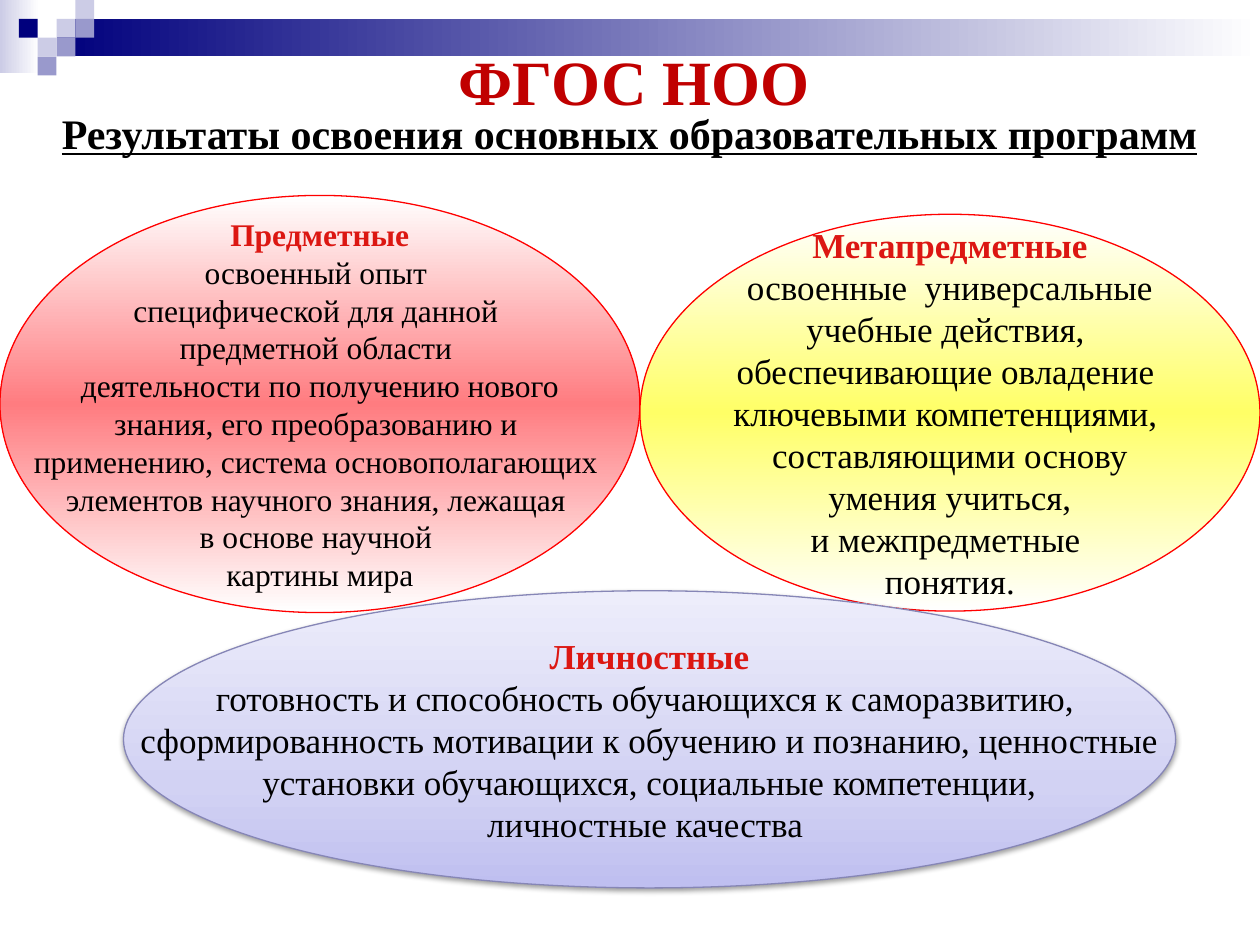
from lxml.etree import SubElement
from pptx import Presentation
from pptx.dml.color import RGBColor as Rgb
from pptx.enum.shapes import MSO_SHAPE as Shape
from pptx.enum.text import MSO_ANCHOR as Anchor, PP_ALIGN as Align
from pptx.oxml.ns import qn
from pptx.util import Cm, Pt

HUES = {
    "navy": "00007D", "mist": "CCCCE6", "haze": "9999CC", "white": "FFFFFF",
    "rose": "FF7C80", "lemon": "FFFF66", "red": "FF0000", "head": "DC1712",
    "title": "C00000", "black": "000000", "edge": "8686B6",
    "deep": "BFBFF0", "mid": "D2D2F3", "pale": "EDEDFB",
}
FACE = "Times New Roman"


def hue(name):
    return Rgb.from_string(HUES[name])


def apply(item, look):
    for key, value in look.items():
        setattr(item, key, value)


def node(base, tag, **attrs):
    return SubElement(base, qn(tag), {k: str(v) for k, v in attrs.items()})


def shade(fill, stops, angle):
    fill.gradient()
    fill.gradient_angle = angle
    ramp = fill._fill._gradFill.find(qn("a:gsLst"))
    for old in list(ramp):
        ramp.remove(old)
    for at, name in stops:
        stop = node(ramp, "a:gs", pos=at * 1000)
        node(stop, "a:srgbClr", val=HUES[name])


def draw(slide, kind, box, paint, angle=0, edge=None):
    form = slide.shapes.add_shape(kind, *map(Cm, box))
    form.shadow.inherit = False
    if isinstance(paint, str):
        form.fill.solid()
        form.fill.fore_color.rgb = hue(paint)
    else:
        shade(form.fill, paint, angle)
    if edge:
        form.line.color.rgb = hue(edge)
        form.line.width = Pt(0.75)
    else:
        form.line.fill.background()
    return form


def write(form, rows, wrap, anchor):
    frame = form.text_frame
    apply(frame, {"word_wrap": wrap, "vertical_anchor": anchor})
    for i, (text, name, look) in enumerate(rows):
        para = frame.paragraphs[0] if i == 0 else frame.add_paragraph()
        para.alignment = Align.CENTER
        run = para.add_run()
        run.text = text
        apply(run.font, {"name": FACE, **look})
        run.font.color.rgb = hue(name)


def header(slide, box):
    left, top, width, unit = box
    draw(slide, Shape.RECTANGLE, (left, top, 0.79, 1.47),
         [(0, "mist"), (100, "white")])
    draw(slide, Shape.RECTANGLE, (left + 3 * unit, top + unit, width - 3 * unit, 2 * unit),
         [(0, "navy"), (100, "white")])
    tiles = [(3, 1, "mist"), (4, 0, "mist"), (4, 1, "haze"), (2, 2, "mist"),
             (1, 1, "navy"), (3, 2, "haze"), (2, 3, "haze")]
    for col, row, name in tiles:
        draw(slide, Shape.RECTANGLE,
             (left + col * unit, top + row * unit, unit, unit), name)


def oval(slide, box, stops, angle, edge, size, head, lines):
    form = draw(slide, Shape.OVAL, box, stops, angle, edge)
    rows = [(head, "head", {"size": Pt(size), "bold": True})]
    rows += [(line, "black", {"size": Pt(size), "bold": False}) for line in lines]
    write(form, rows, False, Anchor.MIDDLE)
    return form


def drop(form):
    glow = form._element.spPr.find(qn("a:effectLst"))
    cast = node(glow, "a:outerShdw", blurRad=Pt(3.1), dist=Pt(1.6),
                dir=5400000, rotWithShape=0)
    tint = node(cast, "a:srgbClr", val=HUES["black"])
    node(tint, "a:alpha", val=38000)


def label(slide, box, text, name, look, anchor, inset):
    form = slide.shapes.add_textbox(*map(Cm, box))
    form.text_frame.margin_top = Cm(inset)
    write(form, [(text, name, {"bold": True, **look})], True, anchor)


def main():
    deck = Presentation()
    apply(deck, {"slide_width": Cm(25.4), "slide_height": Cm(19.05)})
    slide = deck.slides.add_slide(deck.slide_layouts[6])
    header(slide, (0, 0, 25.4, 0.38))
    oval(slide, (0, 3.94, 12.9, 8.41),
         [(0, "white"), (50, "rose"), (100, "white")], 270, "red", 18,
         "Предметные", [
             "освоенный опыт ",
             "специфической для данной ",
             "предметной области ",
             "деятельности по получению нового",
             "знания, его преобразованию и ",
             "применению, система основополагающих ",
             "элементов научного знания, лежащая ",
             "в основе научной ",
             "картины мира"])
    oval(slide, (12.9, 4.32, 12.5, 8),
         [(0, "white"), (50, "lemon"), (100, "white")], 270, "red", 20,
         "Метапредметные", [
             "освоенные  универсальные",
             "учебные действия, ",
             "обеспечивающие овладение ",
             "ключевыми компетенциями, ",
             "составляющими основу",
             "умения учиться,",
             "и межпредметные ",
             "понятия."])
    drop(oval(slide, (2.49, 11.91, 21.21, 5.99),
              [(0, "deep"), (35, "mid"), (100, "pale")], 90, "edge", 20,
              "Личностные", [
                  "готовность и способность обучающихся к саморазвитию, ",
                  "сформированность мотивации к обучению и познанию, ценностные",
                  "установки обучающихся, социальные компетенции,",
                  "личностные качества "]))
    label(slide, (0.69, 2.03, 24, 1.27),
          "Результаты освоения основных образовательных программ", "black",
          {"size": Pt(24), "underline": True}, Anchor.MIDDLE, 0.13)
    label(slide, (5.94, 0.58, 13.69, 3), "ФГОС НОО", "title",
          {"size": Pt(36)}, Anchor.TOP, 0.28)
    deck.save("out.pptx")


if __name__ == "__main__":
    main()
